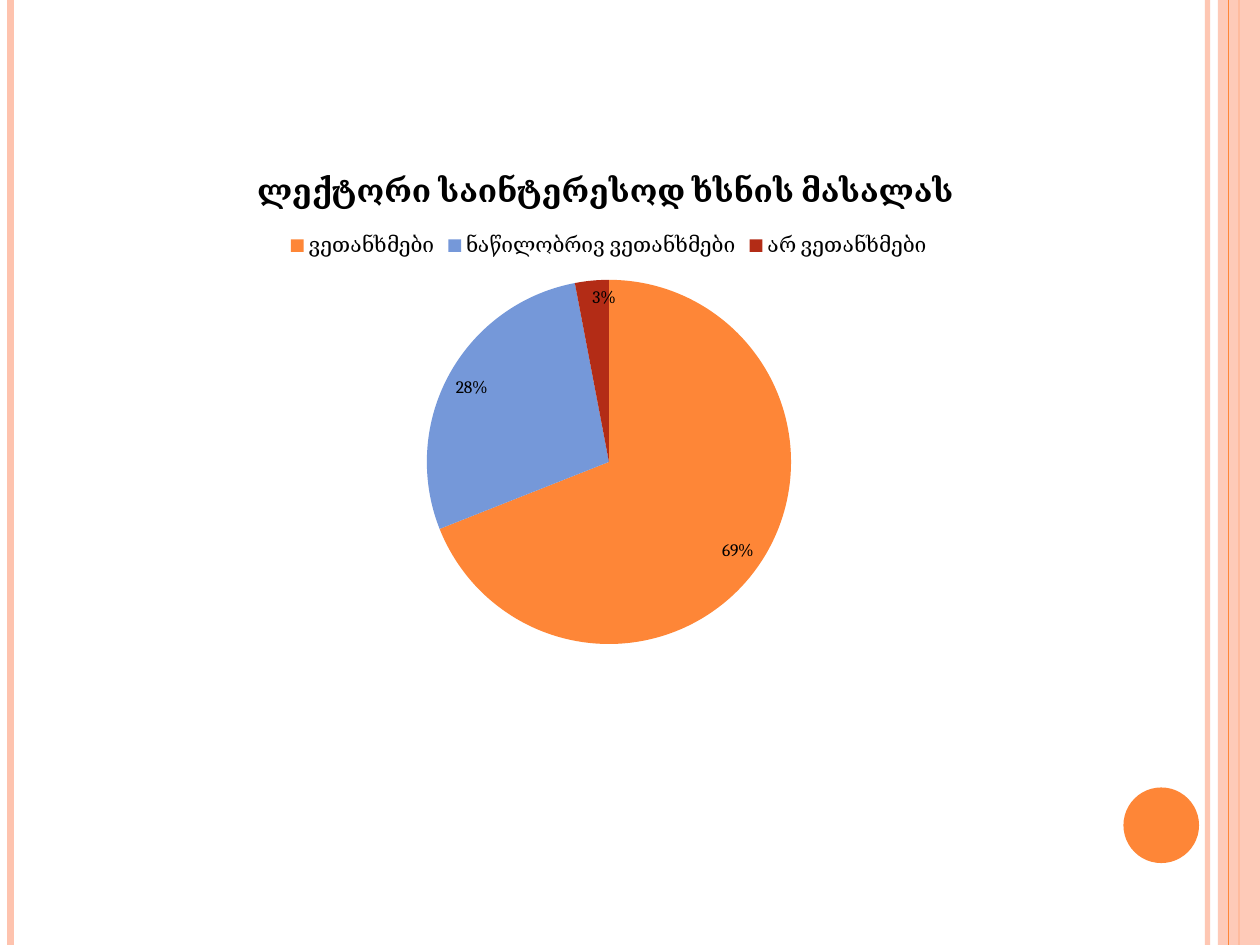
from dataclasses import dataclass

from lxml.etree import SubElement
from pptx import Presentation
from pptx.chart.data import CategoryChartData
from pptx.dml.color import RGBColor
from pptx.enum.chart import XL_CHART_TYPE as ChartType
from pptx.enum.chart import XL_LABEL_POSITION as LabelPosition
from pptx.enum.chart import XL_LEGEND_POSITION as LegendPosition
from pptx.enum.shapes import MSO_CONNECTOR as Connector
from pptx.enum.shapes import MSO_SHAPE as Shape
from pptx.oxml.ns import qn
from pptx.util import Inches, Pt


@dataclass(frozen=True)
class Theme:
    font: str = "Cambria"
    text: str = "000000"
    orange: str = "FE8637"
    peach: str = "FEC3AE"
    blue: str = "7598D9"
    red: str = "B32C16"
    title_size: int = 18
    legend_size: int = 12
    label_size: int = 10


class SlideBuilder:
    """Places elements on a grid of 120 columns and 90 rows."""

    COLUMNS, ROWS = 120, 90

    def __init__(self, presentation, theme):
        self.theme = theme
        self.column = presentation.slide_width / self.COLUMNS
        self.row = presentation.slide_height / self.ROWS
        self.slide = presentation.slides.add_slide(presentation.slide_layouts[6])

    def box(self, left, top, width, height):
        return (round(left * self.column), round(top * self.row),
                round(width * self.column), round(height * self.row))

    @staticmethod
    def set_alpha(fill, percent):
        color = fill._xPr.find(qn("a:solidFill"))[0]
        SubElement(color, qn("a:alpha")).set("val", str(percent * 1000))

    def style_font(self, font, size, bold=False):
        font.name = self.theme.font
        font.size = Pt(size)
        font.bold = bold
        font.color.rgb = RGBColor.from_string(self.theme.text)

    def vertical_rule(self, column, color, width, opacity=100):
        x, top, _, height = self.box(column, 0, 0, self.ROWS)
        rule = self.slide.shapes.add_connector(
            Connector.STRAIGHT, x, top, x, top + height)
        rule.line.width = Pt(width)
        rule.line.color.rgb = RGBColor.from_string(color)
        if opacity < 100:
            self.set_alpha(rule.line.fill, opacity)
        SubElement(rule._element.spPr, qn("a:effectLst"))

    def filled_shape(self, kind, area, color, opacity=100):
        shape = self.slide.shapes.add_shape(kind, *self.box(*area))
        shape.shadow.inherit = False
        shape.line.fill.background()
        shape.fill.solid()
        shape.fill.fore_color.rgb = RGBColor.from_string(color)
        if opacity < 100:
            self.set_alpha(shape.fill, opacity)

    def pie_chart(self, area, title, answers):
        """Draw a pie from (category, value, color) answers."""
        data = CategoryChartData()
        data.categories = [category for category, _, _ in answers]
        data.add_series("Series 1", [value for _, value, _ in answers])
        chart = self.slide.shapes.add_chart(
            ChartType.PIE, *self.box(*area), data).chart
        self.style_font(chart.font, self.theme.label_size)

        chart.has_title = True
        title_run = chart.chart_title.text_frame.paragraphs[0].add_run()
        title_run.text = title
        self.style_font(title_run.font, self.theme.title_size, bold=True)
        chart.chart_title.include_in_layout = False

        chart.has_legend = True
        chart.legend.position = LegendPosition.TOP
        chart.legend.include_in_layout = False
        self.style_font(chart.legend.font, self.theme.legend_size)

        plot = chart.plots[0]
        plot.vary_by_categories = True
        plot.has_data_labels = True
        labels = plot.data_labels
        labels.show_value = False
        labels.show_percentage = True
        labels.number_format = "0%"
        labels.number_format_is_linked = False
        labels.position = LabelPosition.INSIDE_END
        self.style_font(labels.font, self.theme.label_size)

        for index, (_, _, color) in enumerate(answers):
            slice_format = plot.series[0].points[index].format
            slice_format.fill.solid()
            slice_format.fill.fore_color.rgb = RGBColor.from_string(color)
            slice_format.line.fill.background()


def main():
    theme = Theme()
    presentation = Presentation()
    presentation.slide_width = Inches(10)
    presentation.slide_height = Inches(7.5)
    builder = SlideBuilder(presentation, theme)

    builder.vertical_rule(115, theme.peach, 3, opacity=93)
    builder.vertical_rule(1, theme.peach, 4.5)
    builder.vertical_rule(118, theme.orange, 1.5)
    builder.filled_shape(Shape.RECTANGLE, (116, 0, 4, 90), theme.peach, opacity=87)
    builder.vertical_rule(117, theme.orange, 0.75)
    builder.filled_shape(Shape.OVAL, (107, 75, 7.2, 7.2), theme.orange)

    builder.pie_chart(
        (14, 14, 88, 49),
        "ლექტორი საინტერესოდ ხსნის მასალას ",
        [("ვეთანხმები", 69, theme.orange),
         ("ნაწილობრივ ვეთანხმები", 28, theme.blue),
         ("არ ვეთანხმები", 3, theme.red)])

    presentation.save("out.pptx")


if __name__ == "__main__":
    main()
